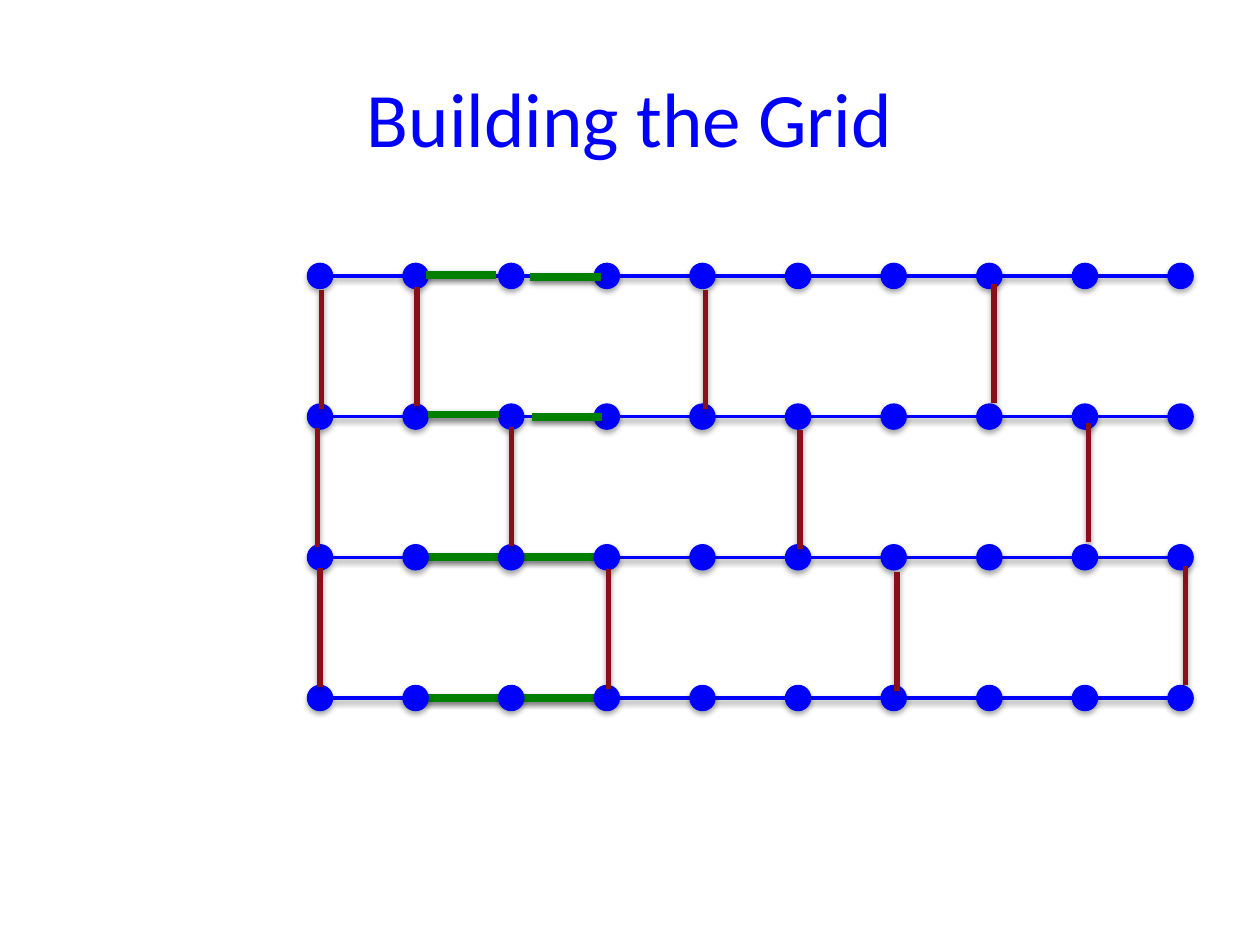
from lxml.etree import SubElement
from pptx import Presentation
from pptx.dml.color import RGBColor
from pptx.enum.shapes import MSO_CONNECTOR, MSO_SHAPE
from pptx.enum.text import MSO_ANCHOR, PP_ALIGN
from pptx.oxml.ns import qn
from pptx.util import Inches, Pt

BLUE = RGBColor(0x00, 0x00, 0xFF)
GREEN = RGBColor(0x00, 0x80, 0x00)
MAROON = RGBColor(0x89, 0x10, 0x1B)

# Node centres, in inches
COLUMNS = [2.54 + 6.83 / 9 * column for column in range(10)]
ROWS = [2.19 + 3.35 / 3 * row for row in range(4)]
NODE = 0.2
POST_HEIGHT = 0.945

deck = Presentation()
deck.slide_width, deck.slide_height = Inches(10), Inches(7.5)
page = deck.slides.add_slide(deck.slide_layouts[6])


def write_text(text, left, top, width, height, size, color, font="Calibri"):
    box = page.shapes.add_textbox(
        Inches(left), Inches(top), Inches(width), Inches(height))
    box.text_frame.word_wrap = True
    box.text_frame.vertical_anchor = MSO_ANCHOR.MIDDLE
    para = box.text_frame.paragraphs[0]
    para.alignment = PP_ALIGN.CENTER
    span = para.add_run()
    span.text = text
    span.font.name, span.font.size = font, Pt(size)
    span.font.color.rgb = color


def draw_line(x1, y1, x2, y2, color, weight):
    line = page.shapes.add_connector(
        MSO_CONNECTOR.STRAIGHT, Inches(x1), Inches(y1), Inches(x2), Inches(y2))
    line.line.color.rgb = color
    line.line.width = Pt(weight)


# Horizontal rails, with the green stretch on the two lower rows
for y in ROWS:
    draw_line(COLUMNS[0] + NODE / 2, y, COLUMNS[-1], y, BLUE, 2)
for y in ROWS[2:]:
    draw_line(3.34, y, 4.78, y, GREEN, 4.5)

# Nodes
for y in ROWS:
    for x in COLUMNS:
        node = page.shapes.add_shape(
            MSO_SHAPE.OVAL, Inches(x - NODE / 2), Inches(y - NODE / 2),
            Inches(NODE), Inches(NODE))
        node.fill.solid()
        node.fill.fore_color.rgb = BLUE
        node.line.color.rgb = BLUE
        node.line.width = Pt(0.75)

# Vertical posts: the left edge, then three descending staircases
posts = [(2.55, 2.3), (2.52, 3.4), (2.54, 4.51)]
for x, y in [(3.31, 2.28), (5.6, 2.3), (7.89, 2.25)]:
    posts += [(x, y), (x + 0.75, y + 1.11), (x + 1.52, y + 2.24)]
for x, y in posts:
    draw_line(x, y, x, y + POST_HEIGHT, MAROON, 3)

# Short green links on the two upper rows
for x, y in [(3.4, 3.29), (4.22, 3.31), (3.38, 2.18), (4.21, 2.2)]:
    draw_line(x, y, x + 0.56, y, GREEN, 4.5)

# Soft shadow straight below every line and node
for shape in page.shapes:
    is_line = shape.element.tag == qn("p:cxnSp")
    effects = SubElement(shape.element.spPr, qn("a:effectLst"))
    shadow = SubElement(
        effects, qn("a:outerShdw"), blurRad="40000",
        dist="20000" if is_line else "23000", dir="5400000", rotWithShape="0")
    black = SubElement(shadow, qn("a:srgbClr"), val="000000")
    SubElement(black, qn("a:alpha"), val="38000" if is_line else "35000")

# Title
write_text("Building the Grid", left=0.5, top=0.3, width=9, height=1.25,
           size=44, color=BLUE)

deck.save("out.pptx")
